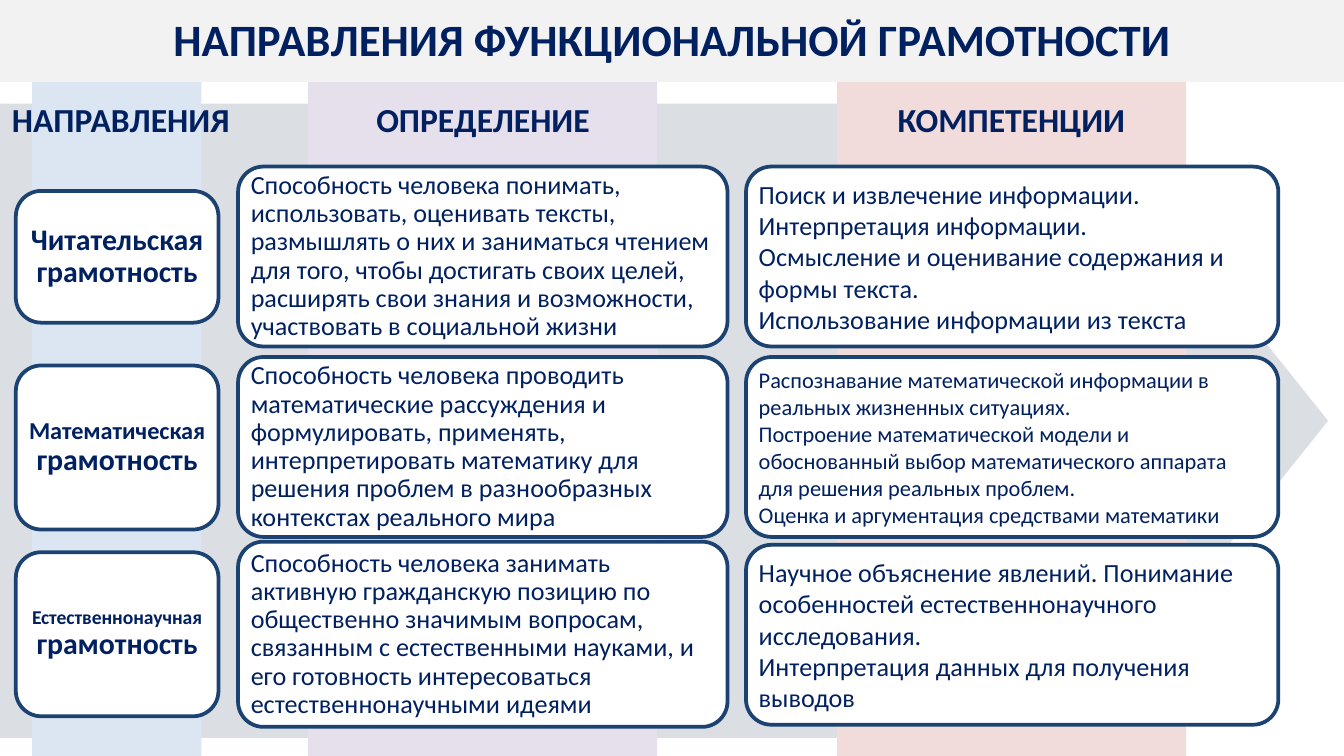
from dataclasses import dataclass
from typing import NamedTuple

import lxml.etree
import pptx
import pptx.dml.color
import pptx.enum.shapes
import pptx.enum.text
import pptx.oxml.ns
import pptx.util

Cm = pptx.util.Cm
Align = pptx.enum.text.PP_ALIGN
Anchor = pptx.enum.text.MSO_ANCHOR
Kind = pptx.enum.shapes.MSO_SHAPE


@dataclass(frozen=True)
class Theme:
    font: str = "Calibri"
    ink: str = "002060"
    edge: str = "1C4271"
    card: str = "FFFFFF"
    band: str = "F2F2F2"
    arrow: str = "CDD0D7"
    blue: str = "DCE6F2"
    lilac: str = "E6E0EC"
    pink: str = "F2DCDB"
    title: float = 24
    head: float = 18
    label: float = 16
    body: float = 14
    small: float = 12
    long: float = 13
    longest: float = 10.5


THEME = Theme()
WIDTH, HEIGHT = 25.4, 14.29
RADIUS = 0.48
INSET = 0.1


class Box(NamedTuple):
    left: float
    top: float
    width: float
    height: float


class Lead(NamedTuple):
    text: str
    size: float
    split: bool = False


class Card(NamedTuple):
    top: float
    height: float
    lines: tuple[str, ...]
    size: float = THEME.body
    lead: Lead | None = None


class Column(NamedTuple):
    head: str
    place: Box
    stripe: Box
    fill: str
    left: float
    width: float
    cards: tuple[Card, ...]
    bold: bool = False
    align: Align = Align.LEFT
    space: float = 0.9


def stripe(left: float, width: float) -> Box:
    return Box(left, 1.35, width, HEIGHT - 1.35)


COLUMNS = (
    Column("КОМПЕТЕНЦИИ", Box(16.69, 1.75, 4.85, 1.02), stripe(15.82, 6.6),
           THEME.pink, 14.1, 10.06, (
               Card(3.15, 3.4, (
                   "Поиск и извлечение информации.",
                   "Интерпретация информации.",
                   "Осмысление и оценивание содержания и формы текста.",
                   "Использование информации из текста")),
               Card(6.75, 3.4, (
                   "Распознавание математической информации в реальных жизненных ситуациях.",
                   "Построение математической модели и обоснованный выбор "
                   "математического аппарата для решения реальных проблем.",
                   "Оценка и аргументация средствами математики"), THEME.small),
               Card(10.3, 3.4, (
                   "Научное объяснение явлений. Понимание особенностей "
                   "естественнонаучного исследования.",
                   "Интерпретация данных для получения выводов")),
           ), space=1.0),
    Column("ОПРЕДЕЛЕНИЕ", Box(6.83, 1.75, 4.6, 1.02), stripe(5.82, 6.6),
           THEME.lilac, 4.5, 9.25, (
               Card(3.15, 3.4, (
                   "Способность человека понимать, использовать, оценивать тексты, "
                   "размышлять о них и заниматься чтением для того, чтобы достигать "
                   "своих целей, расширять свои знания и возможности, участвовать "
                   "в социальной жизни",)),
               Card(6.75, 3.4, (
                   "Способность человека проводить математические рассуждения и "
                   "формулировать, применять, интерпретировать математику для "
                   "решения проблем в разнообразных контекстах реального мира",)),
               Card(10.24, 3.5, (
                   "Способность человека занимать активную гражданскую позицию по "
                   "общественно значимым вопросам, связанным с естественными науками, "
                   "и его готовность интересоваться естественнонаучными идеями",)),
           )),
    Column("НАПРАВЛЕНИЯ", Box(-0.05, 1.75, 4.67, 1.02), stripe(0.61, 3.2),
           THEME.blue, 0.3, 3.83, (
               Card(3.61, 2.49, ("Читательская грамотность",), THEME.label),
               Card(6.91, 3.1, ("грамотность",), THEME.label,
                    Lead("Математическая ", THEME.long)),
               Card(10.44, 3.1, ("грамотность",), THEME.label,
                    Lead("Естественнонаучная", THEME.longest, True)),
           ), bold=True, align=Align.CENTER),
)


def tint(code: str) -> pptx.dml.color.RGBColor:
    return pptx.dml.color.RGBColor.from_string(code)


def write(shape, *lines: str, size: float, bold: bool = False,
          align: Align = Align.LEFT, space: float = 1.0,
          wrap: bool = True, inset: float | None = None,
          lead: Lead | None = None) -> None:
    frame = shape.text_frame
    frame.auto_size = pptx.enum.text.MSO_AUTO_SIZE.NONE
    frame.word_wrap = wrap
    frame.vertical_anchor = Anchor.MIDDLE
    if inset is not None:
        frame.margin_left = frame.margin_right = Cm(inset)
        frame.margin_top = frame.margin_bottom = Cm(inset)
    for row, line in enumerate(lines):
        para = frame.add_paragraph() if row else frame.paragraphs[0]
        para.alignment = align
        para.line_spacing = space
        para.space_before = para.space_after = pptx.util.Pt(0)
        parts = [Lead(line, size)]
        if lead and not row:
            parts.insert(0, lead)
        for part in parts:
            run = para.add_run()
            run.text = part.text
            run.font.name = THEME.font
            run.font.size = pptx.util.Pt(part.size)
            run.font.bold = bold
            run.font.color.rgb = tint(THEME.ink)
            if part.split:
                para.add_line_break()


def draw(slide, kind: Kind, box: Box, fill: str, edge: str | None = None):
    shape = slide.shapes.add_shape(kind, *map(Cm, box))
    shape.shadow.inherit = False
    shape.fill.solid()
    shape.fill.fore_color.rgb = tint(fill)
    if edge:
        shape.line.color.rgb = tint(edge)
        shape.line.width = pptx.util.Pt(2)
    else:
        shape.line.fill.background()
    return shape


def fade(shape, share: int) -> None:
    name = pptx.oxml.ns.qn
    color = shape.fill._xPr.find(name("a:solidFill")).find(name("a:srgbClr"))
    lxml.etree.SubElement(color, name("a:alpha")).set("val", str(share * 1000))


def put_card(slide, col: Column, card: Card) -> None:
    box = Box(col.left, card.top, col.width, card.height)
    shape = draw(slide, Kind.ROUNDED_RECTANGLE, box, THEME.card, THEME.edge)
    shape.adjustments[0] = RADIUS / min(box.width, box.height)
    write(shape, *card.lines, size=card.size, bold=col.bold, align=col.align,
          space=col.space, inset=INSET, lead=card.lead)


def put_title(slide, text: str) -> None:
    draw(slide, Kind.RECTANGLE, Box(0, -0.05, WIDTH, 1.6), THEME.band)
    title = slide.shapes.title
    title.left, title.top, title.width, title.height = map(Cm, Box(0, 0.1, WIDTH, 1.27))
    write(title, text, size=THEME.title, bold=True, align=Align.CENTER)
    slide.shapes._spTree.append(title._element)


def main() -> None:
    deck = pptx.Presentation()
    deck.slide_width, deck.slide_height = Cm(WIDTH), Cm(HEIGHT)
    slide = deck.slides.add_slide(deck.slide_layouts[5])
    arrow = draw(slide, Kind.PENTAGON, Box(0, 1.96, 25.1, 11.99), THEME.arrow)
    arrow.adjustments[0] = 0.4
    fade(arrow, 70)
    for col in COLUMNS:
        draw(slide, Kind.RECTANGLE, col.stripe, col.fill)
        for card in col.cards:
            put_card(slide, col, card)
    put_title(slide, "НАПРАВЛЕНИЯ ФУНКЦИОНАЛЬНОЙ ГРАМОТНОСТИ")
    for col in COLUMNS:
        head = slide.shapes.add_textbox(*map(Cm, col.place))
        write(head, col.head, size=THEME.head, bold=True,
              align=Align.CENTER, wrap=False)
    deck.save("out.pptx")


if __name__ == "__main__":
    main()
